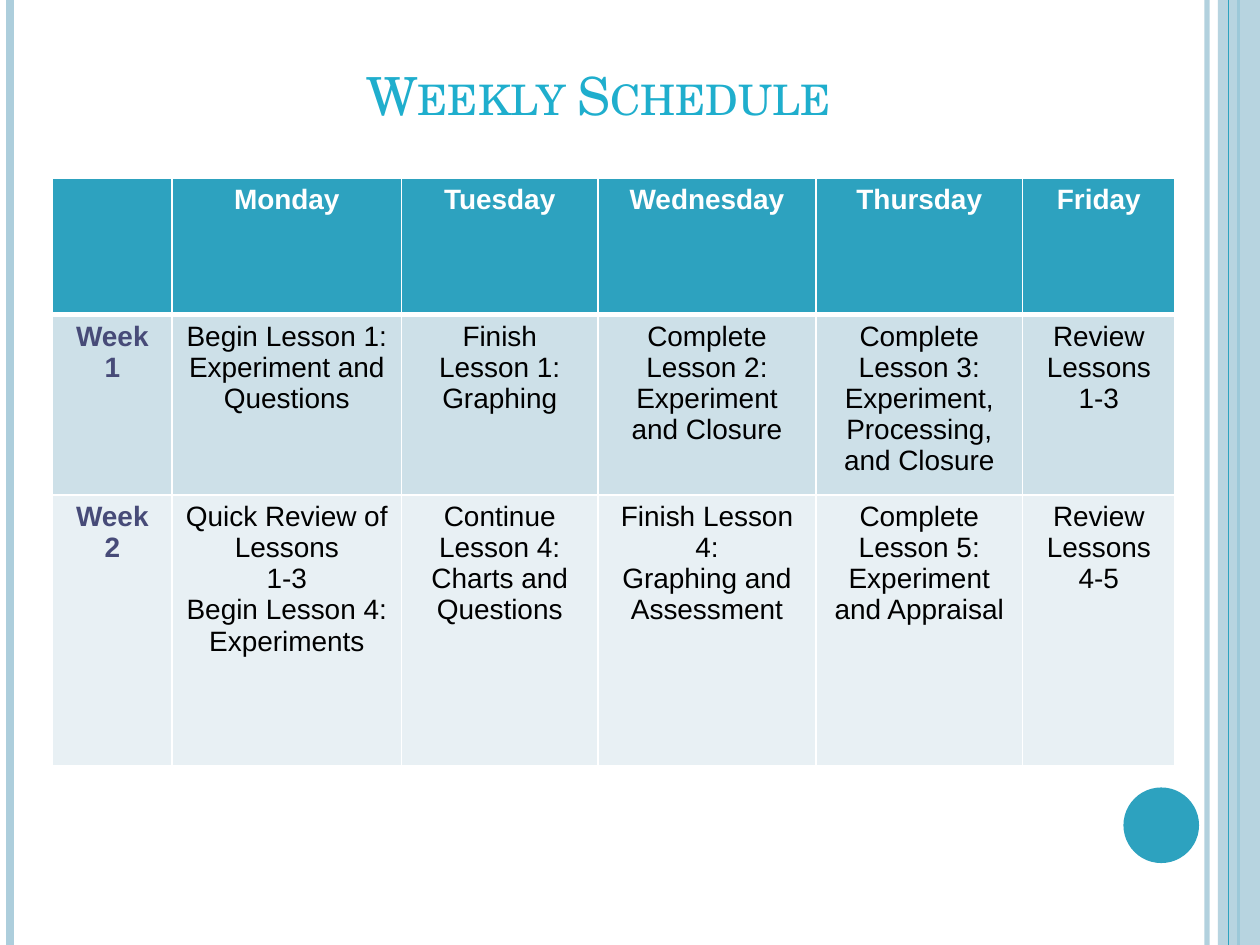
import pptx
import pptx.util
import pptx.dml.color
import pptx.enum.shapes
import pptx.enum.text
import pptx.oxml.ns
import lxml.etree

Pt = pptx.util.Pt
qn = pptx.oxml.ns.qn

COLORS = {
    "teal": "2DA2BF",
    "pale": "ADCEDC",
    "title": "1FAECD",
    "white": "FFFFFF",
    "black": "000000",
    "week": "474B78",
    "band_dark": "CDE0E8",
    "band_light": "E8F0F4",
}
TITLE = "Weekly Schedule"
SCHEDULE = [
    ["", "Monday", "Tuesday", "Wednesday", "Thursday", "Friday"],
    ["Week 1", "Begin Lesson 1:\nExperiment and Questions", "Finish Lesson 1:\nGraphing",
     "Complete Lesson 2: Experiment and Closure",
     "Complete Lesson 3: Experiment, Processing, and Closure", "Review Lessons 1-3"],
    ["Week 2", "Quick Review of Lessons\n1-3\nBegin Lesson 4:\nExperiments",
     "Continue Lesson 4:\nCharts and Questions",
     "Finish Lesson 4:\nGraphing and Assessment",
     "Complete Lesson 5: Experiment and Appraisal", "Review Lessons 4-5"],
]
DAY_WIDTHS = [68.4, 131.04, 112.32, 124.56, 118.08, 87.12]
WEEK_HEIGHTS = [77.76, 90, 154.8]
ROW_FILLS = ["teal", "band_dark", "band_light"]
SLIDE_W, SLIDE_H = 720, 540
RULES = [
    (689.8, "pale", 3, 93),
    (5.8, "pale", 4.5, 100),
    (707.8, "teal", 1.5, 100),
]
INNER_RULE = (702, "teal", 0.75, 100)


def rgb(name):
    return pptx.dml.color.RGBColor.from_string(COLORS[name])


def set_opacity(element, percent):
    color = element.find(".//" + qn("a:srgbClr"))
    lxml.etree.SubElement(color, qn("a:alpha"), val=str(percent * 1000))


def write(frame, text, size, font, color, bold=False, small_caps=False):
    for index, line in enumerate(text.split("\n")):
        paragraph = frame.paragraphs[0] if index == 0 else frame.add_paragraph()
        paragraph.alignment = pptx.enum.text.PP_ALIGN.CENTER
        run = paragraph.add_run()
        run.text = line
        run.font.size = Pt(size)
        run.font.name = font
        run.font.bold = bold
        run.font.color.rgb = rgb(color)
        if small_caps:
            run.font._element.set("cap", "small")


def add_rule(shapes, x, color, width, opacity):
    rule = shapes.add_connector(
        pptx.enum.shapes.MSO_CONNECTOR.STRAIGHT, Pt(x), 0, Pt(x), Pt(SLIDE_H))
    rule.line.color.rgb = rgb(color)
    rule.line.width = Pt(width)
    properties = rule._element.spPr
    if opacity < 100:
        set_opacity(properties, opacity)
    lxml.etree.SubElement(properties, qn("a:effectLst"))


def add_decoration(shapes, preset, x, y, width, height, color):
    decoration = shapes.add_shape(preset, Pt(x), Pt(y), Pt(width), Pt(height))
    decoration.shadow.inherit = False
    decoration.fill.solid()
    decoration.fill.fore_color.rgb = rgb(color)
    decoration.line.fill.background()
    return decoration


def set_borders(cell, top, bottom):
    properties = cell._tc.get_or_add_tcPr()
    for side, width in (("L", 1), ("R", 1), ("T", top), ("B", bottom)):
        border = lxml.etree.SubElement(properties, qn("a:ln" + side), w=str(Pt(width)))
        fill = lxml.etree.SubElement(border, qn("a:solidFill"))
        lxml.etree.SubElement(fill, qn("a:srgbClr"), val=COLORS["white"])


def add_schedule(shapes):
    table = shapes.add_table(
        len(SCHEDULE), len(DAY_WIDTHS), Pt(30), Pt(102),
        Pt(sum(DAY_WIDTHS)), Pt(sum(WEEK_HEIGHTS))).table
    for column, width in zip(table.columns, DAY_WIDTHS):
        column.width = Pt(width)
    for row, height in zip(table.rows, WEEK_HEIGHTS):
        row.height = Pt(height)
    for r, entries in enumerate(SCHEDULE):
        for c, entry in enumerate(entries):
            cell = table.cell(r, c)
            set_borders(cell, top=3 if r == 1 else 1, bottom=3 if r == 0 else 1)
            cell.fill.solid()
            cell.fill.fore_color.rgb = rgb(ROW_FILLS[r])
            color = "white" if r == 0 else "week" if c == 0 else "black"
            if entry:
                write(cell.text_frame, entry, size=16, font="Arial", color=color,
                      bold=r == 0 or c == 0)


def main():
    deck = pptx.Presentation()
    deck.slide_width, deck.slide_height = Pt(SLIDE_W), Pt(SLIDE_H)
    shapes = deck.slides.add_slide(deck.slide_layouts[6]).shapes
    presets = pptx.enum.shapes.MSO_SHAPE

    for rule in RULES:
        add_rule(shapes, *rule)
    side_band = add_decoration(shapes, presets.RECTANGLE, 696, 0, 24, SLIDE_H, "pale")
    set_opacity(side_band._element.spPr, 87)
    add_rule(shapes, *INNER_RULE)
    add_decoration(shapes, presets.OVAL, 642, 450, 43.2, 43.2, "teal")

    heading = shapes.add_textbox(Pt(48), Pt(18), Pt(588), Pt(57.6)).text_frame
    heading.word_wrap = True
    heading.vertical_anchor = pptx.enum.text.MSO_ANCHOR.BOTTOM
    write(heading, TITLE, size=30, font="TeX Gyre Schola", color="title", small_caps=True)

    add_schedule(shapes)
    deck.save("out.pptx")


if __name__ == "__main__":
    main()
